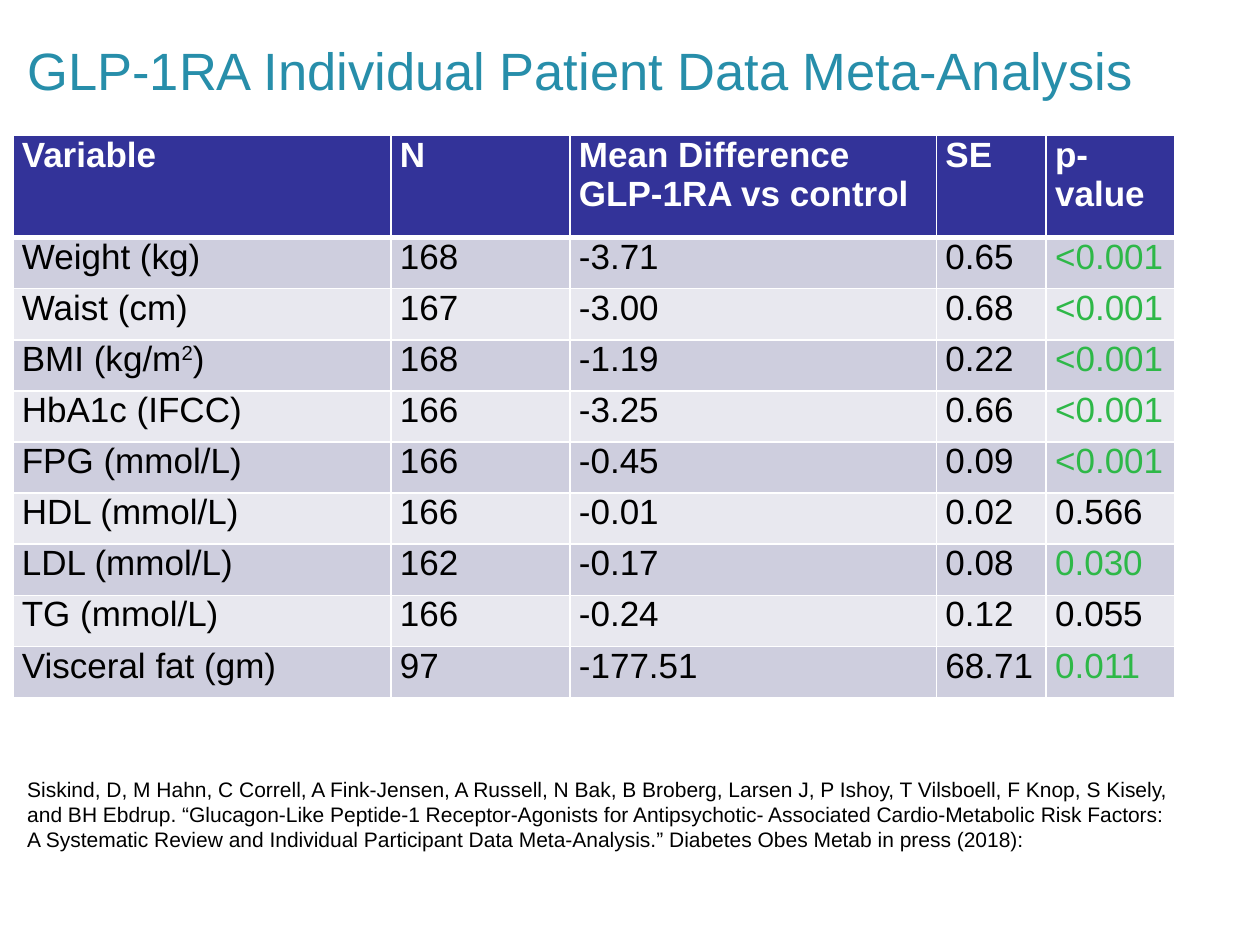
from lxml.etree import SubElement
from pptx import Presentation
from pptx.dml.color import RGBColor
from pptx.enum.text import MSO_ANCHOR, MSO_AUTO_SIZE, PP_ALIGN
from pptx.oxml import parse_xml
from pptx.oxml.ns import nsdecls, qn
from pptx.util import Cm, Pt

COLORS = {
    "title": "278EAA",
    "header": "333399",
    "band_dark": "CECEDE",
    "band_light": "E8E8EF",
    "white": "FFFFFF",
    "text": "000000",
    "significant": "2EB848",
}

COLUMN_WIDTHS = [7.62, 3.61, 7.39, 2.21, 2.59]
HEADER_HEIGHT = 2.06
ROW_HEIGHT = 1.03
SIGNIFICANCE_LEVEL = 0.05

HEADERS = ["Variable", "N", "Mean Difference GLP-1RA vs control", "SE", "p-value"]
RESULTS = [
    ["Weight (kg)", "168", "-3.71", "0.65", "<0.001"],
    ["Waist (cm)", "167", "-3.00", "0.68", "<0.001"],
    [["BMI (kg/m", "2", ")"], "168", "-1.19", "0.22", "<0.001"],
    ["HbA1c (IFCC)", "166", "-3.25", "0.66", "<0.001"],
    ["FPG (mmol/L)", "166", "-0.45", "0.09", "<0.001"],
    ["HDL (mmol/L)", "166", "-0.01", "0.02", "0.566"],
    ["LDL (mmol/L)", "162", "-0.17", "0.08", "0.030"],
    ["TG (mmol/L)", "166", "-0.24", "0.12", "0.055"],
    ["Visceral fat (gm)", "97", "-177.51", "68.71", "0.011"],
]
CITATION = (
    "Siskind, D, M Hahn, C Correll, A Fink-Jensen, A Russell, N Bak, B Broberg, "
    "Larsen J, P Ishoy, T Vilsboell, F Knop, S Kisely, and BH Ebdrup. "
    "“Glucagon-Like Peptide-1 Receptor-Agonists for Antipsychotic- Associated "
    "Cardio-Metabolic Risk Factors: A Systematic Review and Individual Participant "
    "Data Meta-Analysis.” Diabetes Obes Metab in press (2018):"
)


class SlideBuilder:
    font_name = "Arial"

    def __init__(self, slide):
        self.slide = slide

    def add_run(self, paragraph, text, size, color, bold=False, superscript=False):
        run = paragraph.add_run()
        run.text = text
        run.font.name = self.font_name
        run.font.size = Pt(size)
        run.font.bold = bold
        run.font.color.rgb = RGBColor.from_string(COLORS[color])
        if superscript:
            run.font._element.set("baseline", "30000")

    def add_title(self, text, left, top, width, height):
        title = self.slide.shapes.title
        title.left, title.top = Cm(left), Cm(top)
        title.width, title.height = Cm(width), Cm(height)
        title.text_frame.vertical_anchor = MSO_ANCHOR.MIDDLE
        title.text_frame.auto_size = MSO_AUTO_SIZE.NONE
        paragraph = title.text_frame.paragraphs[0]
        paragraph.alignment = PP_ALIGN.LEFT
        self.add_run(paragraph, text, 30, "title")

    def add_text(self, text, left, top, width, height):
        box = self.slide.shapes.add_textbox(Cm(left), Cm(top), Cm(width), Cm(height))
        box.text_frame.word_wrap = True
        box.text_frame.auto_size = MSO_AUTO_SIZE.SHAPE_TO_FIT_TEXT
        self.add_run(box.text_frame.paragraphs[0], text, 12, "text")

    def set_borders(self, cell, top, bottom):
        properties = cell._tc.get_or_add_tcPr()
        widths = {"lnL": 1, "lnR": 1, "lnT": top, "lnB": bottom}
        for position, (side, width) in enumerate(widths.items()):
            line = parse_xml(f'<a:{side} {nsdecls("a")} w="{Pt(width)}"/>')
            fill = SubElement(line, qn("a:solidFill"))
            SubElement(fill, qn("a:srgbClr"), val=COLORS["white"])
            properties.insert(position, line)

    def fill_cell(self, cell, parts, fill, color, bold, top, bottom):
        cell.margin_left = cell.margin_right = Cm(0.18)
        cell.margin_top = cell.margin_bottom = 0
        cell.fill.solid()
        cell.fill.fore_color.rgb = RGBColor.from_string(COLORS[fill])
        self.set_borders(cell, top, bottom)
        paragraph = cell.text_frame.paragraphs[0]
        for index, part in enumerate(parts):
            self.add_run(paragraph, part, 20, color, bold, superscript=index == 1)

    def add_table(self, headers, results, left, top):
        rows = [headers, *results]
        height = HEADER_HEIGHT + ROW_HEIGHT * len(results)
        table = self.slide.shapes.add_table(
            len(rows), len(headers), Cm(left), Cm(top),
            Cm(sum(COLUMN_WIDTHS)), Cm(height),
        ).table
        for column, width in zip(table.columns, COLUMN_WIDTHS):
            column.width = Cm(width)
        for row_index, values in enumerate(rows):
            is_header = row_index == 0
            table.rows[row_index].height = Cm(HEADER_HEIGHT if is_header else ROW_HEIGHT)
            band = "band_dark" if row_index % 2 else "band_light"
            for column_index, value in enumerate(values):
                color = "white" if is_header else "text"
                if not is_header and column_index == len(headers) - 1:
                    if float(value.lstrip("<")) < SIGNIFICANCE_LEVEL:
                        color = "significant"
                self.fill_cell(
                    table.cell(row_index, column_index),
                    [value] if isinstance(value, str) else value,
                    "header" if is_header else band,
                    color,
                    is_header,
                    top=3 if row_index == 1 else 1,
                    bottom=3 if is_header else 1,
                )


def main():
    presentation = Presentation()
    presentation.slide_width, presentation.slide_height = Cm(25.4), Cm(19.05)
    builder = SlideBuilder(presentation.slides.add_slide(presentation.slide_layouts[5]))
    builder.add_title("GLP-1RA Individual Patient Data Meta-Analysis", 0.3, 0.53, 24.4, 1.75)
    builder.add_table(HEADERS, RESULTS, 0.26, 2.73)
    builder.add_text(CITATION, 0.3, 15.52, 23.72, 1.8)
    presentation.save("out.pptx")


if __name__ == "__main__":
    main()
